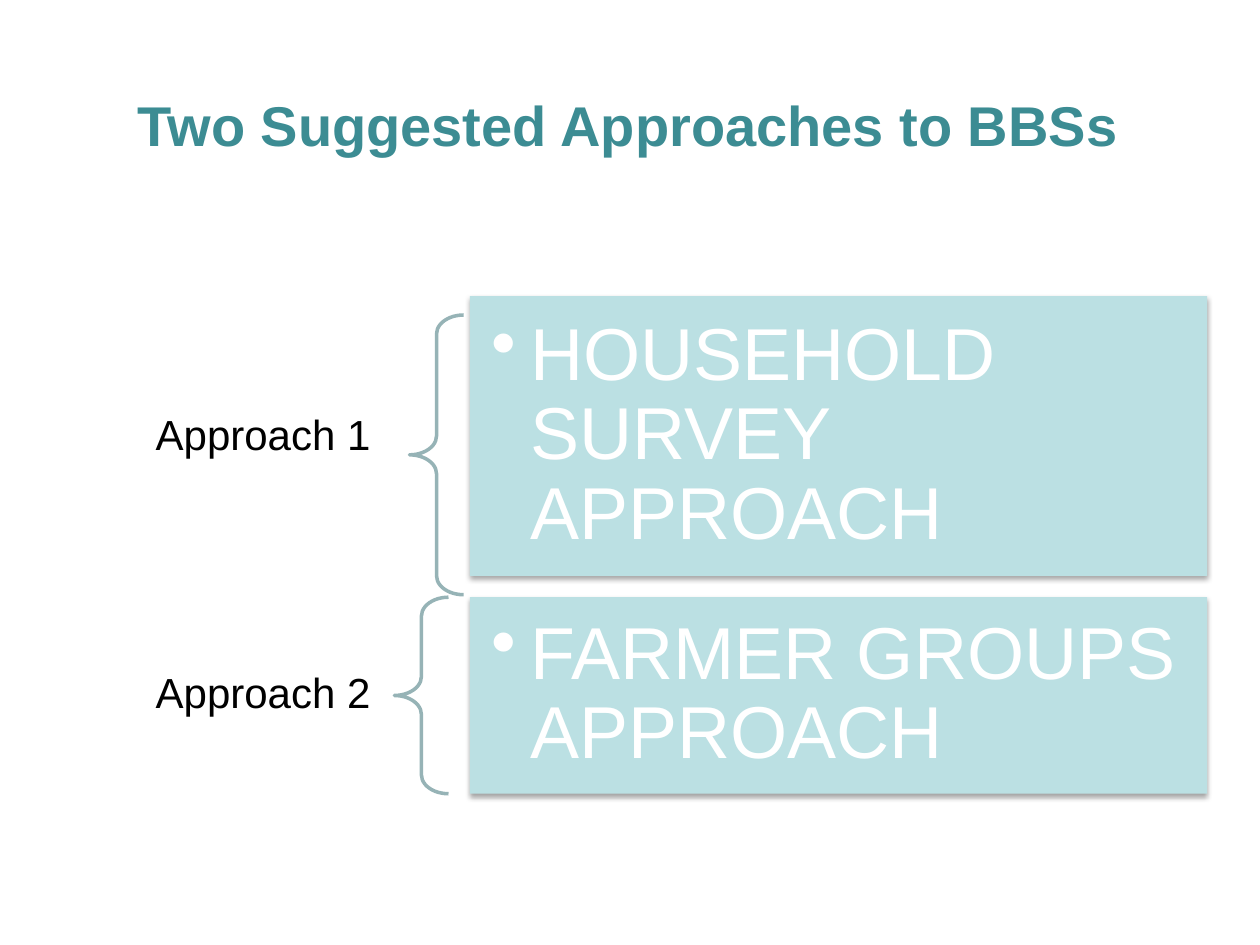
from lxml import etree
from pptx import Presentation
from pptx.dml.color import RGBColor
from pptx.enum.shapes import MSO_SHAPE
from pptx.enum.text import MSO_ANCHOR, PP_ALIGN
from pptx.oxml.ns import qn
from pptx.util import Inches, Pt

RECT, BRACE = MSO_SHAPE.RECTANGLE, MSO_SHAPE.LEFT_BRACE
MIDDLE = MSO_ANCHOR.MIDDLE
LEFT, CENTER, RIGHT = PP_ALIGN.LEFT, PP_ALIGN.CENTER, PP_ALIGN.RIGHT

TEAL = RGBColor(0x3C, 0x8C, 0x93)
PALE = RGBColor(0xBB, 0xE0, 0xE3)
GREY = RGBColor(0x96, 0xB3, 0xB6)
BLACK = RGBColor(0, 0, 0)
WHITE = RGBColor(255, 255, 255)

BOX_X, BOX_W = 3.73, 5.85
LABEL_X, LABEL_W, LABEL_H = 0.98, 2.15, 0.91
BRACE_W = 0.43

# label, label top, brace left, brace top, box text, box top, height
ROWS = [
    ("Approach 1", 3.01, 3.25, 2.5, "HOUSEHOLD SURVEY APPROACH", 2.35, 2.22),
    ("Approach 2", 5.06, 3.13, 4.74, "FARMER GROUPS APPROACH", 4.74, 1.56),
]


def place(x, y, w, h):
    return Inches(x), Inches(y), Inches(w), Inches(h)


def write(shape, text, size, color, align, pad_x, pad_y):
    """Fill the text frame with one paragraph and return it."""
    frame = shape.text_frame
    frame.word_wrap = True
    frame.vertical_anchor = MIDDLE
    frame.margin_left = frame.margin_right = Inches(pad_x)
    frame.margin_top = frame.margin_bottom = Inches(pad_y)
    para = frame.paragraphs[0]
    para.text = text
    para.alignment = align
    para.font.name = "Arial"
    para.font.size = Pt(size)
    para.font.color.rgb = color
    return para


def add_title(slide, text):
    title = slide.shapes.title
    title.left, title.top, title.width, title.height = place(0.96, 0.5, 8.05, 0.97)
    write(title, text, 32, TEAL, CENTER, 0.04, 0.04).font.bold = True


def add_label(slide, text, top):
    box = slide.shapes.add_textbox(*place(LABEL_X, top, LABEL_W, LABEL_H))
    write(box, text, 24, BLACK, RIGHT, 0.19, 0.07).line_spacing = 0.9


def add_brace(slide, left, top, height):
    brace = slide.shapes.add_shape(BRACE, *place(left, top, BRACE_W, height))
    brace.adjustments[0] = 0.35
    brace.shadow.inherit = False
    brace.fill.background()
    brace.line.color.rgb = GREY
    brace.line.width = Pt(2)


def add_shadow(shape):
    """Soft black shadow straight below the shape."""
    shape.shadow.inherit = False
    effects = shape.element.spPr.find(qn("a:effectLst"))
    outer = etree.SubElement(
        effects, qn("a:outerShdw"), blurRad=str(Pt(3.1)), dist=str(Pt(1.8)),
        dir="5400000", rotWithShape="0")
    black = etree.SubElement(outer, qn("a:srgbClr"), val="000000")
    etree.SubElement(black, qn("a:alpha"), val="35000")


def add_bullet(para):
    props = para._p.get_or_add_pPr()
    props.set("marL", str(Inches(0.31)))
    props.set("indent", str(-Inches(0.31)))
    etree.SubElement(props, qn("a:buChar"), char="•")


def add_box(slide, text, top, height):
    box = slide.shapes.add_shape(RECT, *place(BOX_X, top, BOX_W, height))
    box.fill.solid()
    box.fill.fore_color.rgb = PALE
    box.line.fill.background()
    add_shadow(box)
    para = write(box, text, 42, WHITE, LEFT, 0.17, 0.17)
    para.level = 1
    para.line_spacing = 0.9
    # The bullet goes in before the default run settings
    props = para._p.get_or_add_pPr()
    add_bullet(para)
    props.append(props.find(qn("a:defRPr")))


def main():
    deck = Presentation()
    deck.slide_width, deck.slide_height = Inches(10), Inches(7.5)
    slide = deck.slides.add_slide(deck.slide_layouts[5])
    add_title(slide, "Two Suggested Approaches to BBSs")
    # One row per approach: label, brace, box
    for label, label_y, brace_x, brace_y, text, box_y, height in ROWS:
        add_label(slide, label, label_y)
        add_brace(slide, brace_x, brace_y, height)
        add_box(slide, text, box_y, height)
    deck.save("out.pptx")


if __name__ == "__main__":
    main()
